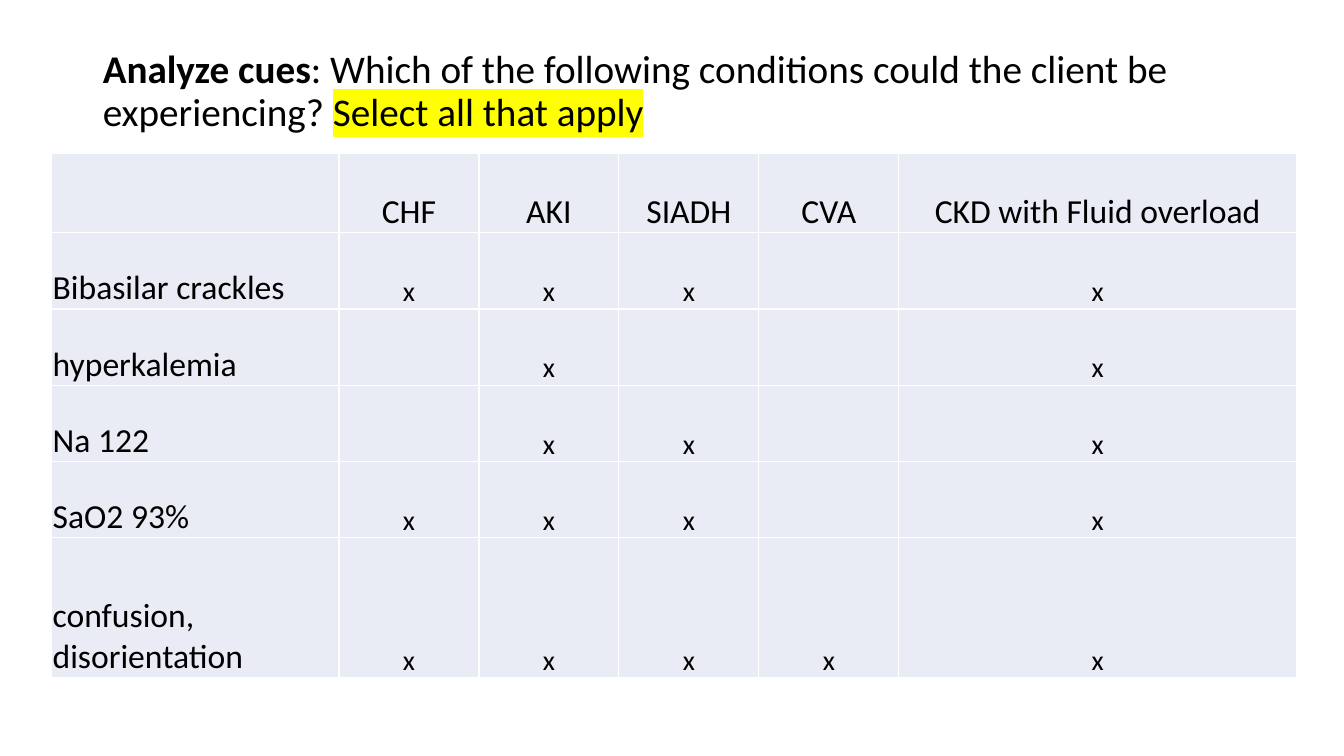
from lxml.etree import SubElement
from pptx import Presentation
from pptx.dml.color import RGBColor
from pptx.enum.text import MSO_ANCHOR as Anchor, MSO_AUTO_SIZE as AutoSize, PP_ALIGN as Align
from pptx.oxml import parse_xml
from pptx.oxml.ns import nsdecls, qn
from pptx.util import Pt

COLORS = {"text": "000000", "cell": "E9EBF5", "border": "FFFFFF", "highlight": "FFFF00"}
FONT = "Calibri"

TITLE_BOX = (66.24, 28.8, 828, 104.4)
TABLE_BOX = (36.9, 109.7, 889.2, 374.4)
TITLE_RUNS = [
    ("Analyze cues", True, None),
    (": Which of the following conditions could the client be experiencing? ", False, None),
    ("Select all that apply", False, "highlight"),
]
CONDITIONS = ["CHF", "AKI", "SIADH", "CVA", "CKD with Fluid overload"]
CUES = {
    "Bibasilar crackles": {"CHF", "AKI", "SIADH", "CKD with Fluid overload"},
    "hyperkalemia": {"AKI", "CKD with Fluid overload"},
    "Na 122": {"AKI", "SIADH", "CKD with Fluid overload"},
    "SaO2 93%": {"CHF", "AKI", "SIADH", "CKD with Fluid overload"},
    "confusion,\ndisorientation": set(CONDITIONS),
}
CUE_WIDTH, CONDITION_WIDTH = 205.2, 100
HEADER_HEIGHT, CUE_HEIGHT = 56.6, 54.5


def set_values(target, values):
    for name, value in values.items():
        setattr(target, name, value)


def style_font(font, size, bold=False):
    set_values(font, {"name": FONT, "size": Pt(size), "bold": bold})
    font.color.rgb = RGBColor.from_string(COLORS["text"])


def highlight(run, color):
    fill = run._r.get_or_add_rPr().find(qn("a:solidFill"))
    fill.addnext(parse_xml(
        f'<a:highlight {nsdecls("a")}><a:srgbClr val="{COLORS[color]}"/></a:highlight>'))


def add_title(slide, box):
    title = slide.shapes.title
    set_values(title, dict(zip(("left", "top", "width", "height"), map(Pt, box))))
    frame = title.text_frame
    # The deeper bottom margin lifts the question clear of the table.
    set_values(frame, {
        "word_wrap": True, "auto_size": AutoSize.NONE, "vertical_anchor": Anchor.MIDDLE,
        "margin_left": Pt(7.2), "margin_right": Pt(7.2),
        "margin_top": Pt(3.6), "margin_bottom": Pt(34),
    })
    question = frame.paragraphs[0]
    set_values(question, {"alignment": Align.LEFT, "line_spacing": 0.9})
    for text, bold, marker in TITLE_RUNS:
        run = question.add_run()
        run.text = text
        style_font(run.font, 28, bold)
        if marker:
            highlight(run, marker)


def add_borders(cell):
    properties = cell._tc.get_or_add_tcPr()
    for position, side in enumerate(("lnL", "lnR", "lnT", "lnB")):
        line = SubElement(properties, qn(f"a:{side}"), w=str(Pt(1)))
        fill = SubElement(line, qn("a:solidFill"))
        SubElement(fill, qn("a:srgbClr"), val=COLORS["border"])
        properties.insert(position, line)


def fill_cell(cell, text, size, alignment):
    cell.fill.solid()
    cell.fill.fore_color.rgb = RGBColor.from_string(COLORS["cell"])
    add_borders(cell)
    if not text:
        return
    set_values(cell, {
        "text": text, "vertical_anchor": Anchor.BOTTOM, "margin_left": Pt(0.72),
        "margin_right": Pt(0.72), "margin_top": Pt(0.72), "margin_bottom": 0,
    })
    for paragraph in cell.text_frame.paragraphs:
        paragraph.alignment = alignment
        for run in paragraph.runs:
            style_font(run.font, size)


def add_cue_table(slide, box):
    """Cross the cues with the conditions; the last row and column take the rest of the box."""
    width, height = box[2:]
    rows = [["", *CONDITIONS]]
    rows += [[cue, *("x" if name in matches else "" for name in CONDITIONS)]
             for cue, matches in CUES.items()]
    table = slide.shapes.add_table(len(rows), len(rows[0]), *map(Pt, box)).table

    widths = [CUE_WIDTH] + [CONDITION_WIDTH] * (len(CONDITIONS) - 1)
    heights = [HEADER_HEIGHT] + [CUE_HEIGHT] * (len(CUES) - 1)
    for column, size in zip(table.columns, widths + [width - sum(widths)]):
        column.width = Pt(size)
    for row, size in zip(table.rows, heights + [height - sum(heights)]):
        row.height = Pt(size)

    for r, row in enumerate(rows):
        for c, text in enumerate(row):
            fill_cell(table.cell(r, c), text, 20 if text == "x" else 24,
                      Align.CENTER if c else Align.LEFT)


def main():
    deck = Presentation()
    set_values(deck, {"slide_width": Pt(960), "slide_height": Pt(540)})
    slide = deck.slides.add_slide(deck.slide_layouts.get_by_name("Title Only"))
    add_title(slide, TITLE_BOX)
    add_cue_table(slide, TABLE_BOX)
    deck.save("out.pptx")


if __name__ == "__main__":
    main()
